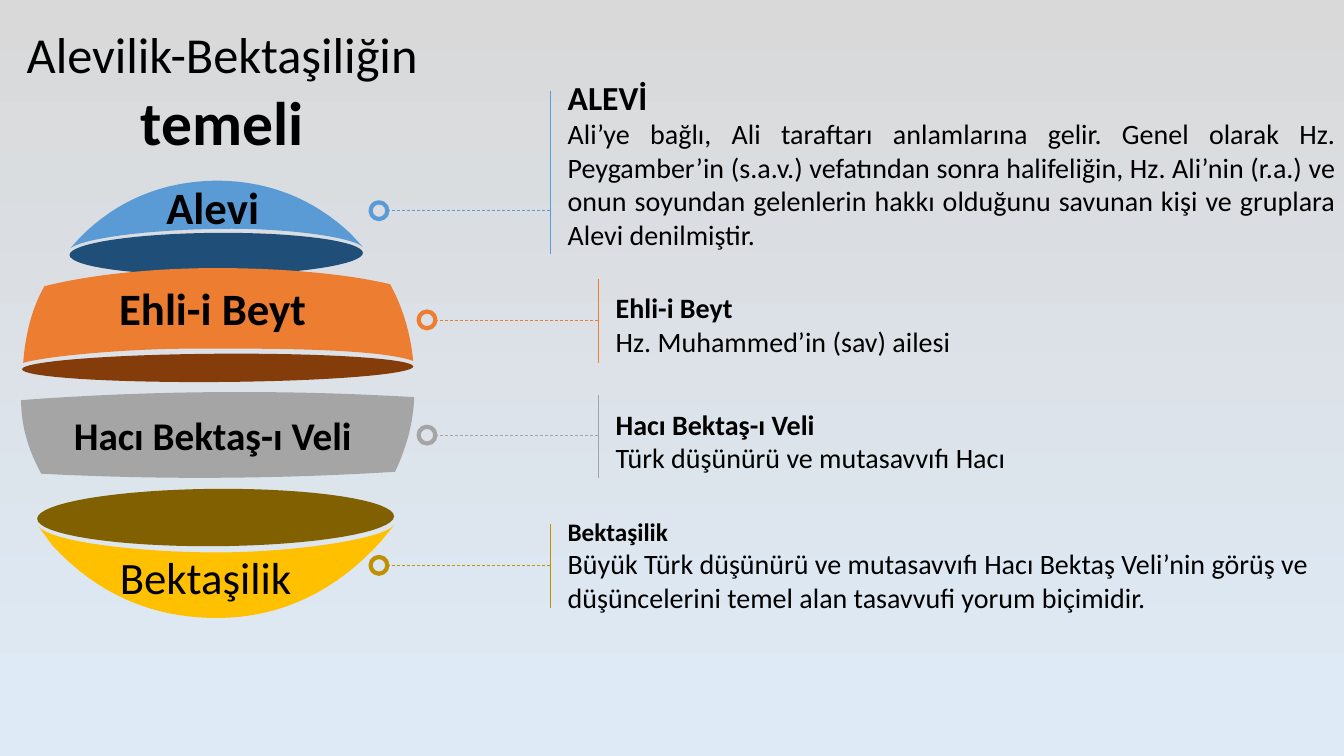
from math import comb, cos, pi, sin, tau

from lxml.etree import SubElement
from pptx import Presentation
from pptx.dml.color import RGBColor
from pptx.enum.dml import MSO_LINE
from pptx.enum.shapes import MSO_CONNECTOR, MSO_SHAPE
from pptx.enum.text import MSO_ANCHOR, MSO_AUTO_SIZE, PP_ALIGN
from pptx.oxml.ns import qn
from pptx.util import Pt

TILT = 0.4 * pi / 180
STEPS = 16

# Band outlines: chains of Bezier curves, in points from the globe's corner.
# Each curve starts where the one before it ends.
CAP = [(35.4, 48.1)], [
    [(42.6, 40.2)],
    [(69.2, 13.6), (101.6, 0.6), (139.1, 0)],
    [(176.5, 0), (208.9, 12.8), (235.6, 38)],
    [(244.2, 47.4)],
    [(236, 40), (190, 34.4), (150.6, 34.4)],
    [(100, 34.4), (48, 40), (35.4, 48.1)],
]
UPPER_BAND = [(1.6, 130.2)], [
    [(4, 98), (16.7, 75.5)],
    [(50, 67), (96, 62.5), (139.8, 62.5)],
    [(186, 62.5), (232, 66.5), (263.6, 74)],
    [(277, 98), (280.2, 128.8)],
    [(262, 122.4), (215, 120.3), (162.8, 120.1)],
    [(115.3, 120.1)],
    [(75, 120.5), (20, 125), (1.6, 130.2)],
]
LOWER_BAND = [(0.1, 156.8)], [
    [(140.5, 146.4), (280.9, 154.7)],
    [(280, 181), (267.2, 208)],
    [(141.2, 215.9), (14.5, 209.4)],
    [(0, 183), (0.1, 156.8)],
]
BOWL = [(12.4, 246.8)], [
    [(20, 258), (85, 265.6), (139.8, 265.6)],
    [(195, 265.6), (259, 256), (266.5, 246.1)],
    [(257.2, 257.6)],
    [(224.8, 293.6), (185.2, 312.4), (139.8, 312.4)],
    [(94.4, 312.4), (54.8, 295.8), (22.4, 260.5)],
    [(12.4, 246.8)],
]


def rgb(color):
    return RGBColor.from_string(color)


def bezier(ctrl, t):
    n = len(ctrl) - 1
    weights = [comb(n, i) * t**i * (1 - t)**(n - i) for i in range(n + 1)]
    return tuple(sum(w * p[k] for w, p in zip(weights, ctrl)) for k in (0, 1))


def chain(start, curves):
    """Points along a chain of Bezier curves."""
    pts = list(start)
    for curve in curves:
        ctrl = [pts[-1]] + curve
        steps = 1 if len(curve) == 1 else STEPS
        pts += [bezier(ctrl, i / steps) for i in range(1, steps + 1)]
    return pts


def lens(left, top, width, height):
    """Points of an ellipse that leans by TILT."""
    pts = []
    for i in range(4 * STEPS):
        a = tau * i / (4 * STEPS)
        dx, dy = width / 2 * cos(a), height / 2 * sin(a)
        pts.append((left + width / 2 + dx, top + height / 2 + dy - TILT * dx))
    return pts


def add_outline(s, left, top, pts, color):
    pts = [(Pt(left + x), Pt(top + y)) for x, y in pts]
    builder = s.shapes.build_freeform(*pts[0], scale=1.0)
    builder.add_line_segments(pts[1:], close=True)
    sp = builder.convert_to_shape()
    sp.shadow.inherit = False
    sp.fill.solid()
    sp.fill.fore_color.rgb = rgb(color)
    sp.line.fill.background()


def add_text(s, box, paragraphs, align=PP_ALIGN.LEFT, insets=(0, 0),
             anchor=MSO_ANCHOR.MIDDLE, wrap=True):
    """Add paragraphs, each a list of (text, size, bold) runs."""
    tf = s.shapes.add_textbox(*map(Pt, box)).text_frame
    tf.word_wrap = wrap
    tf.auto_size = MSO_AUTO_SIZE.SHAPE_TO_FIT_TEXT
    tf.vertical_anchor = anchor
    tf.margin_left, tf.margin_right = map(Pt, insets)
    for i, runs in enumerate(paragraphs):
        p = tf.add_paragraph() if i else tf.paragraphs[0]
        p.alignment = align
        for text, size, bold in runs:
            r = p.add_run()
            r.text = text
            r.font.name, r.font.size, r.font.bold = "Calibri", Pt(size), bold
            r.font.color.rgb = rgb("000000")
    return tf


def add_line(s, x1, y1, x2, y2, color, dash=None):
    line = s.shapes.add_connector(MSO_CONNECTOR.STRAIGHT, *map(Pt, (x1, y1, x2, y2)))
    line.line.color.rgb = rgb(color)
    line.line.width = Pt(0.5)
    if dash:
        line.line.dash_style = dash
    SubElement(line._element.spPr, qn("a:effectLst"))


def add_globe(s, left, top):
    for pts, color in (
        (chain(*LOWER_BAND), "A5A5A5"),
        (chain(*CAP), "5B9BD5"),
        (lens(34.7, 37.3, 209.5, 30.2), "1F4E79"),
        (chain(*UPPER_BAND), "ED7D31"),
        (lens(0.8, 123.7, 279.4, 20.2), "843C0B"),
        (chain(*BOWL), "FFC000"),
        (lens(11.6, 220.2, 254.9, 41), "806000"),
    ):
        add_outline(s, left, top, pts, color)
    for text, size, x, y, w, h in (
        ("Alevi", 32, 38.3, -4.4, 204.5, 46),
        ("Ehli-i Beyt", 32, 38.3, 67.6, 204.5, 46),
        ("Hacı Bektaş-ı Veli", 28, 25.3, 161.2, 230.4, 41),
    ):
        add_text(s, (left + x, top + y, w, h), [[(text, size, True)]],
                 PP_ALIGN.CENTER, (0, 7.2))
    add_text(s, (left + 63.5, top + 259.8, 138.2, 46), [[("Bektaşilik", 32, False)]],
             insets=(7.2, 7.2), anchor=MSO_ANCHOR.TOP, wrap=False)


def add_callout(s, left, mid, color, stem, text_box, head, head_size, body,
                body_align=PP_ALIGN.LEFT):
    """Ring at left, dashed lead, upright stem (top, height) and text (top, width, height)."""
    ring, reach, gap = 12, 128.6, 12.2
    x = left + reach
    top, width, height = text_box
    tf = add_text(s, (x + gap, top, width, height),
                  [[(head, head_size, True)], [(body, 20, False)]])
    tf.paragraphs[1].alignment = body_align
    sp = s.shapes.add_shape(MSO_SHAPE.OVAL, Pt(left), Pt(mid - ring / 2), Pt(ring), Pt(ring))
    sp.shadow.inherit = False
    sp.fill.background()
    sp.line.color.rgb = rgb(color)
    sp.line.width = Pt(3)
    add_line(s, x, stem[0], x, sum(stem), color)
    add_line(s, left + ring, mid, x, mid, color, MSO_LINE.DASH)


def add_background(s):
    fill = s.background.fill
    fill.gradient()
    fill.gradient_angle = 270
    for stop, position, color in zip(fill.gradient_stops, (0, 1), ("D9D9D9", "DEEBF7")):
        stop.position = position
        stop.color.rgb = rgb(color)


def main():
    prs = Presentation()
    prs.slide_width, prs.slide_height = Pt(960), Pt(540)
    s = prs.slides.add_slide(prs.slide_layouts[6])
    add_background(s)
    add_globe(s, 15, 129)
    outer, inner = 264.7, 299
    add_callout(s, outer, 150.5, "5B9BD5", (64.8, 116.6), (50.4, 548.6, 133.2), "ALEVİ", 24,
                "Ali’ye bağlı, Ali taraftarı anlamlarına gelir. Genel olarak Hz. "
                "Peygamber’in (s.a.v.) vefatından sonra halifeliğin, Hz. Ali’nin (r.a.) ve "
                "onun soyundan gelenlerin hakkı olduğunu savunan kişi ve gruplara "
                "Alevi denilmiştir. ", PP_ALIGN.JUSTIFY)
    add_callout(s, inner, 228.5, "ED7D31", (199.4, 59.8), (203.8, 366.5, 55.4),
                "Ehli-i Beyt", 20, "Hz. Muhammed’in (sav) ailesi")
    add_callout(s, inner, 310.8, "A5A5A5", (281.8, 59.8), (287.3, 366.5, 55.4),
                "Hacı Bektaş-ı Veli", 20, "Türk düşünürü ve mutasavvıfı Hacı")
    add_callout(s, outer, 403.8, "BF9000", (374.4, 59.8), (365, 554.4, 77.8), "Bektaşilik", 18,
                "Büyük Türk düşünürü ve mutasavvıfı Hacı Bektaş Veli’nin görüş ve "
                "düşüncelerini temel alan tasavvufi yorum biçimidir.")
    add_text(s, (3.6, 13, 310.3, 104.4),
             [[("Alevilik-Bektaşiliğin ", 36, False), ("temeli", 44, True)]],
             PP_ALIGN.CENTER, (7.2, 7.2), MSO_ANCHOR.TOP)
    prs.save("out.pptx")


if __name__ == "__main__":
    main()
